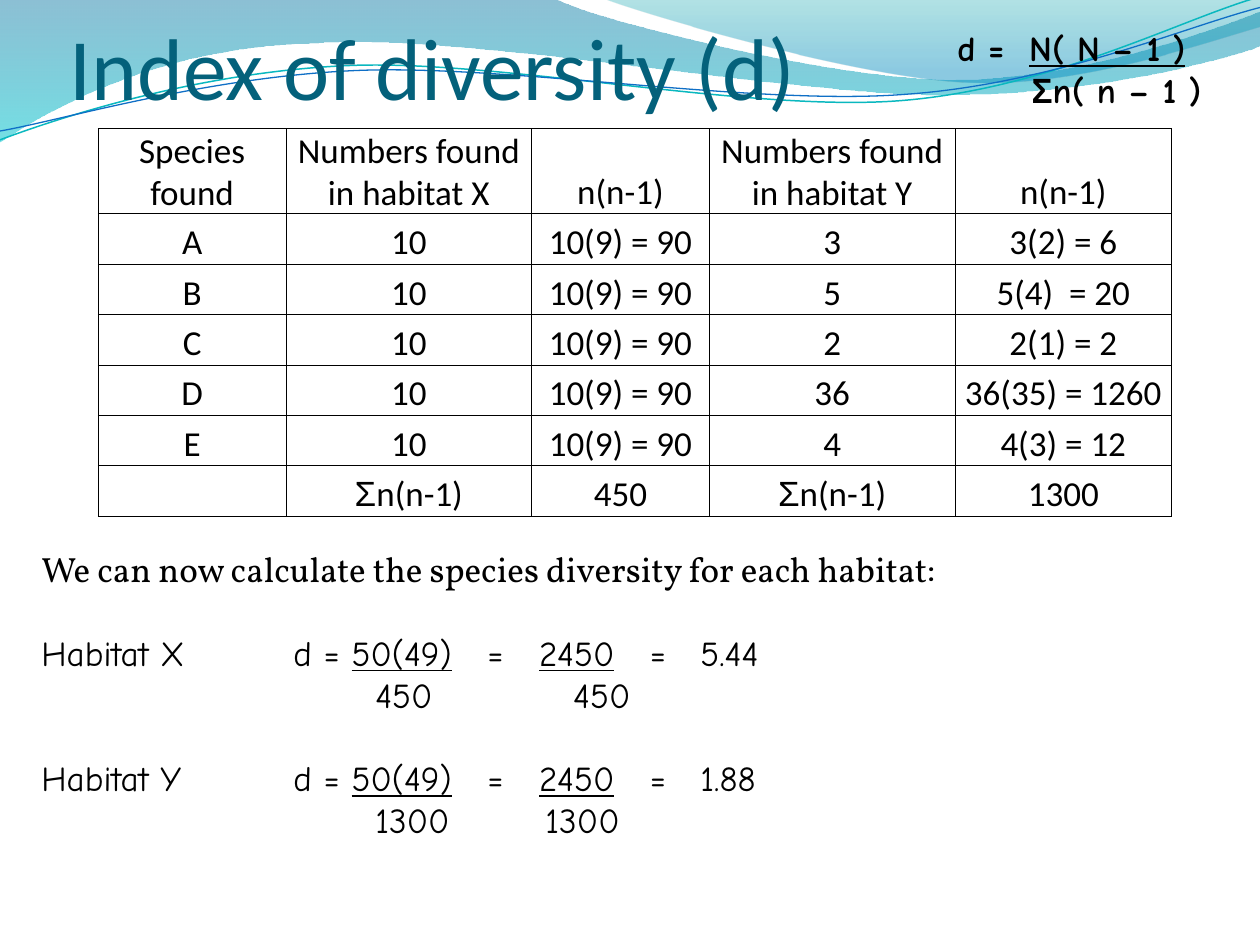
from math import cos, radians, sin

from lxml.etree import SubElement
from pptx import Presentation
from pptx.dml.color import RGBColor
from pptx.enum.text import MSO_ANCHOR, PP_ALIGN
from pptx.oxml.ns import qn
from pptx.util import Inches, Pt

COLORS = {
    "title": "04617B", "text": "000000", "teal": "0AB8BF", "blue": "0F6FC6",
    "deep": "0074A1", "cyan": "00C6CF", "sea": "00A1A9", "sky": "008BBF",
}
BODY, HAND, SERIF, SYMBOL = "Calibri", "Comic Neue", "Vollkorn", "Arial"
STRAND_TILT = -2.7

LEFT_WAVE = [
    (0, 0), (4.4, -0.01), (4.76, 0.17, 6.64, 0.63, 7.58, 0.63),
    (8.53, 0.63, 9.58, 0.26, 10, 0.09), (10.01, 0.36),
    (9.83, 0.44, 8.7, 0.76, 7.46, 0.75), (6.22, 0.75, 3.82, 0.28, 2.57, 0.34),
    (1.29, 0.36, 0.46, 0.83, -0.01, 1.13), (0, 0),
]
RIGHT_WAVE = [
    (4.79, -0.01), (5.09, 0.11, 6.82, 0.62, 7.69, 0.65),
    (8.56, 0.69, 9.61, 0.32, 10, 0.21), (10, 0), (4.79, -0.01),
]
TEAL_STRAND = [
    (0, 1.11), (0.48, 0.93, 1.58, 0.57, 2.77, 0.52),
    (3.95, 0.47, 5.93, 0.89, 7.13, 0.8), (8.33, 0.71, 9.38, 0.15, 9.98, -0.02),
]
BLUE_STRAND = [
    (0, 1.04), (0.47, 0.96, 1.64, 0.61, 2.83, 0.56),
    (4.03, 0.51, 5.97, 0.84, 7.17, 0.75), (8.36, 0.67, 9.41, 0.21, 10, 0.06),
]
COLUMN_WIDTHS = [1.49, 1.95, 1.41, 1.95, 1.72]
HEADERS = ["Species found", "Numbers found in habitat X", "n(n-1)",
           "Numbers found in habitat Y", "n(n-1)"]
SPECIES = [
    ("A", "3", "3(2) = 6"), ("B", "5", "5(4)  = 20"), ("C", "2", "2(1) = 2"),
    ("D", "36", "36(35) = 1260"), ("E", "4", "4(3) = 12"),
]
TOTALS = ["", "Σn(n-1)", "450", "Σn(n-1)", "1300"]
HABITATS = [
    ("Habitat X", "5.44", "450", 4.22), ("Habitat Y", "1.88", "1300", 4),
]


def rgb(name):
    """Look up a named colour."""
    return RGBColor.from_string(COLORS[name])


def turn(point, degrees, center):
    """Turn a point clockwise about a center."""
    angle = radians(degrees)
    dx, dy = point[0] - center[0], point[1] - center[1]
    return (center[0] + dx * cos(angle) - dy * sin(angle),
            center[1] + dx * sin(angle) + dy * cos(angle))


def add_outline(slide, outline, closed, tilt=0, center=(0, 0)):
    """Add a freeform of straight lines and cubic curves without a shadow."""
    points = [segment[i:i + 2] for segment in outline for i in range(0, len(segment), 2)]
    points = [tuple(map(Inches, turn(point, -tilt, center))) for point in points]
    builder = slide.shapes.build_freeform(*points[0])
    builder.add_line_segments(points[1:], close=closed)
    shape = builder.convert_to_shape()
    shape.rotation = tilt
    shape.shadow.inherit = False
    steps = iter(list(shape.element.iter(qn("a:lnTo"))))
    for segment in outline[1:]:
        step = next(steps)
        if len(segment) == 6:
            step.addprevious(curve := step.makeelement(qn("a:cubicBezTo")))
            for part in (step, next(steps), next(steps)):
                curve.append(part[0])
                part.getparent().remove(part)
    return shape


def add_wave(slide, outline, stops):
    """Add a translucent wave that shades from top to bottom."""
    wave = add_outline(slide, outline, True)
    wave.line.fill.background()
    wave.fill.gradient()
    wave.fill.gradient_angle = 270
    for stop, (position, color, _) in zip(wave.fill.gradient_stops, stops):
        stop.position = position
        stop.color.rgb = rgb(color)
    for tint, (_, _, opacity) in zip(wave.element.spPr.iter(qn("a:srgbClr")), stops):
        SubElement(tint, qn("a:alpha"), val=str(opacity * 1000))


def add_strand(slide, outline, color, width, center):
    """Add a thin tilted curve."""
    strand = add_outline(slide, outline, False, STRAND_TILT, center)
    strand.fill.background()
    strand.line.color.rgb = rgb(color)
    strand.line.width = Pt(width)


def add_run(paragraph, text, font, size=20, color="text", bold=False, underline=False):
    """Append one formatted run."""
    run = paragraph.add_run()
    run.text = text
    run.font.name = font
    run.font.size = Pt(size)
    run.font.color.rgb = rgb(color)
    run.font.bold = bold
    run.font.underline = underline


def add_text_frame(slide, left, top, width, height):
    """Add a wrapping text box and return its frame."""
    box = slide.shapes.add_textbox(*map(Inches, (left, top, width, height)))
    box.text_frame.word_wrap = True
    return box.text_frame


def set_tabs(paragraph, positions):
    """Give a paragraph left-aligned tab stops."""
    tabs = SubElement(paragraph._p.get_or_add_pPr(), qn("a:tabLst"))
    for position in positions:
        SubElement(tabs, qn("a:tab"), pos=str(Inches(position)), algn="l")


def add_title(slide):
    """Add the heading."""
    frame = add_text_frame(slide, 0.55, 0, 9, 0.94)
    frame.margin_left = frame.margin_right = frame.margin_bottom = 0
    frame.vertical_anchor = MSO_ANCHOR.BOTTOM
    add_run(frame.paragraphs[0], "Index of diversity (d)", BODY, 50, "title")


def style_cell(cell, text):
    """Fill in a plain bordered cell."""
    cell.fill.background()
    cell.vertical_anchor = MSO_ANCHOR.BOTTOM
    cell.margin_left = cell.margin_right = cell.margin_top = Inches(0.01)
    cell.margin_bottom = 0
    paragraph = cell.text_frame.paragraphs[0]
    paragraph.alignment = PP_ALIGN.CENTER
    if text.startswith("Σ"):
        add_run(paragraph, "Σ", SYMBOL)
        text = text[1:]
    if text:
        add_run(paragraph, text, BODY)
    properties = cell._tc.get_or_add_tcPr()
    for index, side in enumerate(("lnL", "lnR", "lnT", "lnB")):
        border = SubElement(properties, qn(f"a:{side}"), w=str(Pt(0.5)))
        SubElement(SubElement(border, qn("a:solidFill")), qn("a:srgbClr"), val=COLORS["text"])
        properties.insert(index, border)


def add_species_table(slide):
    """Add the counts for both habitats."""
    rows = [HEADERS]
    rows += [(name, "10", "10(9) = 90", count, product) for name, count, product in SPECIES]
    rows.append(TOTALS)
    frame = slide.shapes.add_table(
        len(rows), len(HEADERS), Inches(0.78), Inches(1.02), Inches(8.52), Inches(3.1))
    table = frame.table
    table.first_row = table.horz_banding = False
    for column, width in zip(table.columns, COLUMN_WIDTHS):
        column.width = Inches(width)
    for row, texts in zip(table.rows, rows):
        row.height = Inches(0.4)
        for cell, text in zip(row.cells, texts):
            style_cell(cell, text)
    frame.height = Inches(3.1)


def add_calculations(slide):
    """Add the worked fractions for each habitat."""
    frame = add_text_frame(slide, 0.23, 4.3, 9.22, 2.46)
    add_run(frame.paragraphs[0],
            "We can now calculate the species diversity for each habitat:", SERIF)
    for habitat, result, divisor, second_divisor_at in HABITATS:
        upper = frame.add_paragraph()
        upper.space_before = Pt(23.5)
        set_tabs(upper, (2, 3.54, 3.95, 4.83, 5.23))
        add_run(upper, f"{habitat}\td = ", HAND)
        add_run(upper, "50(49)", HAND, underline=True)
        add_run(upper, "\t=\t", HAND)
        add_run(upper, "2450", HAND, underline=True)
        add_run(upper, f"\t=\t{result}", HAND)
        lower = frame.add_paragraph()
        set_tabs(lower, (2.65, second_divisor_at))
        add_run(lower, f"\t{divisor}\t{divisor}", HAND)


def add_formula(slide):
    """Add the definition of the index."""
    frame = add_text_frame(slide, 7.5, 0.16, 2.5, 0.77)
    upper, lower = frame.paragraphs[0], frame.add_paragraph()
    set_tabs(upper, (0.57,))
    add_run(upper, "d =\t", HAND, bold=True)
    add_run(upper, "N( N – 1 )", HAND, bold=True, underline=True)
    set_tabs(lower, (0.59,))
    add_run(lower, "\t", HAND, bold=True)
    add_run(lower, "Σ", SYMBOL, bold=True)
    add_run(lower, "n( n – 1 )", HAND, bold=True)


def main():
    """Build and save the slide."""
    deck = Presentation()
    deck.slide_width, deck.slide_height = Inches(10), Inches(7.5)
    slide = deck.slides.add_slide(deck.slide_layouts[6])
    add_wave(slide, LEFT_WAVE, [(0, "deep", 45), (1, "cyan", 55)])
    add_wave(slide, RIGHT_WAVE, [(0, "sea", 30), (0.8, "sky", 45)])
    add_strand(slide, TEAL_STRAND, "teal", 0.85, (4.99, 0.58))
    add_strand(slide, BLUE_STRAND, "blue", 0.75, (5, 0.59))
    add_title(slide)
    add_species_table(slide)
    add_calculations(slide)
    add_formula(slide)
    deck.save("out.pptx")


if __name__ == "__main__":
    main()
